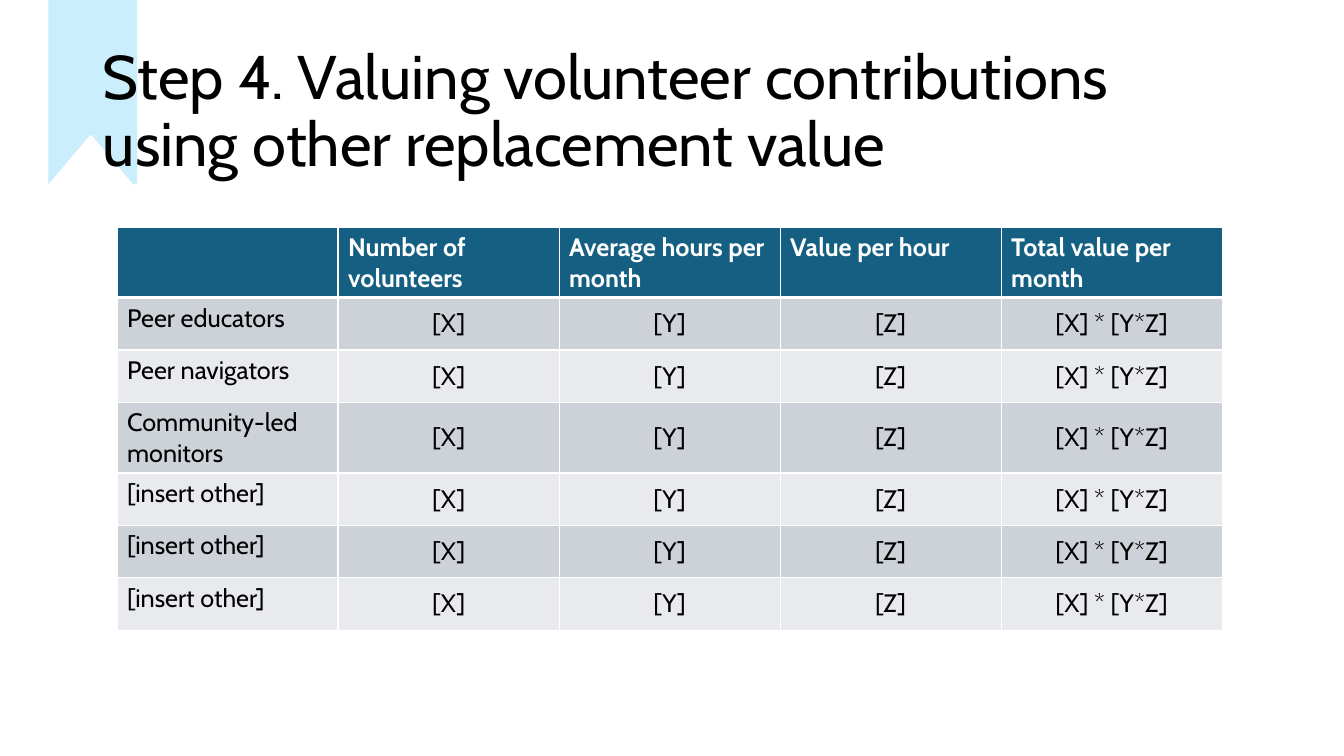
from dataclasses import dataclass

from lxml.etree import SubElement
from pptx import Presentation
from pptx.dml.color import RGBColor
from pptx.enum.shapes import MSO_SHAPE
from pptx.enum.text import MSO_ANCHOR, PP_ALIGN
from pptx.oxml.ns import qn
from pptx.util import Cm, Pt


@dataclass(frozen=True)
class Theme:
    """Colours, font and type sizes of the slide."""

    font: str = "Cabin"
    title_size: int = 44
    table_size: int = 18
    text: str = "000000"
    white: str = "FFFFFF"
    ribbon: str = "CAEEFB"
    header: str = "156082"
    bands: tuple = ("CCD2D8", "E8EAED")
    border: float = 1
    header_border: float = 3


class SlideBuilder:
    """Draws styled elements on the current slide."""

    def __init__(self, slide, theme):
        """Keep the slide and its theme."""
        self.slide = slide
        self.theme = theme

    def style(self, paragraph, size, color, bold=False):
        """Set the font of a paragraph."""
        font = paragraph.font
        font.name = self.theme.font
        font.size = Pt(size)
        font.bold = bold
        font.color.rgb = RGBColor.from_string(color)

    def shape(self, kind, left, top, width, height, color, line_width=0):
        """Add a preset shape, outlined in its own colour if a width is given."""
        shape = self.slide.shapes.add_shape(kind, Cm(left), Cm(top), Cm(width), Cm(height))
        shape.shadow.inherit = False
        shape.fill.solid()
        shape.fill.fore_color.rgb = RGBColor.from_string(color)
        if line_width:
            shape.line.color.rgb = RGBColor.from_string(color)
            shape.line.width = Pt(line_width)
        else:
            shape.line.fill.background()

    def title(self, text, left, top, width, height):
        """Add the slide title."""
        frame = self.slide.shapes.add_textbox(Cm(left), Cm(top), Cm(width), Cm(height)).text_frame
        frame.word_wrap = True
        frame.vertical_anchor = MSO_ANCHOR.MIDDLE
        paragraph = frame.paragraphs[0]
        paragraph.text = text
        paragraph.line_spacing = 0.9
        self.style(paragraph, self.theme.title_size, self.theme.text)

    def borders(self, cell, top, bottom):
        """Draw the four borders of a table cell."""
        properties = cell._tc.get_or_add_tcPr()
        widths = {"L": self.theme.border, "R": self.theme.border, "T": top, "B": bottom}
        for side, width in widths.items():
            line = SubElement(properties, qn(f"a:ln{side}"), w=str(Pt(width)))
            SubElement(SubElement(line, qn("a:solidFill")), qn("a:srgbClr"), val=self.theme.white)

    def cell(self, cell, text, row, column):
        """Fill and style one table cell."""
        theme = self.theme
        is_header = row == 0
        self.borders(
            cell,
            theme.header_border if row == 1 else theme.border,
            theme.header_border if is_header else theme.border,
        )
        cell.fill.solid()
        fill = theme.header if is_header else theme.bands[(row - 1) % 2]
        cell.fill.fore_color.rgb = RGBColor.from_string(fill)
        paragraph = cell.text_frame.paragraphs[0]
        paragraph.text = text
        self.style(paragraph, theme.table_size, theme.white if is_header else theme.text, is_header)
        if not is_header and column > 0:
            paragraph.alignment = PP_ALIGN.CENTER
            cell.vertical_anchor = MSO_ANCHOR.MIDDLE

    def table(self, rows, left, top, column_width, row_height):
        """Add a table with equal columns and rows."""
        row_count, column_count = len(rows), len(rows[0])
        table = self.slide.shapes.add_table(
            row_count, column_count, Cm(left), Cm(top),
            Cm(column_width * column_count), Cm(row_height * row_count),
        ).table
        for column in table.columns:
            column.width = Cm(column_width)
        for row_index, row in enumerate(rows):
            table.rows[row_index].height = Cm(row_height)
            for column_index, text in enumerate(row):
                self.cell(table.cell(row_index, column_index), text, row_index, column_index)


def main():
    """Build and save the volunteer valuation slide."""
    presentation = Presentation()
    presentation.slide_width = Cm(33.87)
    presentation.slide_height = Cm(19.05)
    theme = Theme()
    builder = SlideBuilder(presentation.slides.add_slide(presentation.slide_layouts[6]), theme)

    builder.shape(MSO_SHAPE.RECTANGLE, 1.22, 0, 2.24, 4.65, theme.ribbon)
    builder.shape(MSO_SHAPE.ISOSCELES_TRIANGLE, 1.02, 3.43, 2.54, 1.5, theme.white, 1.5)
    builder.title(
        "Step 4. Valuing volunteer contributions using other replacement value",
        2.34, 1.01, 29.21, 3.68,
    )

    header = ["", "Number of volunteers", "Average hours per month",
              "Value per hour", "Total value per month"]
    roles = ["Peer educators", "Peer navigators", "Community-led monitors"]
    roles += ["[insert other]"] * 3
    formula = ["[X]", "[Y]", "[Z]", "[X] * [Y*Z]"]
    builder.table([header] + [[role] + formula for role in roles], 2.95, 5.72, 5.57, 1.32)

    presentation.save("out.pptx")


if __name__ == "__main__":
    main()
